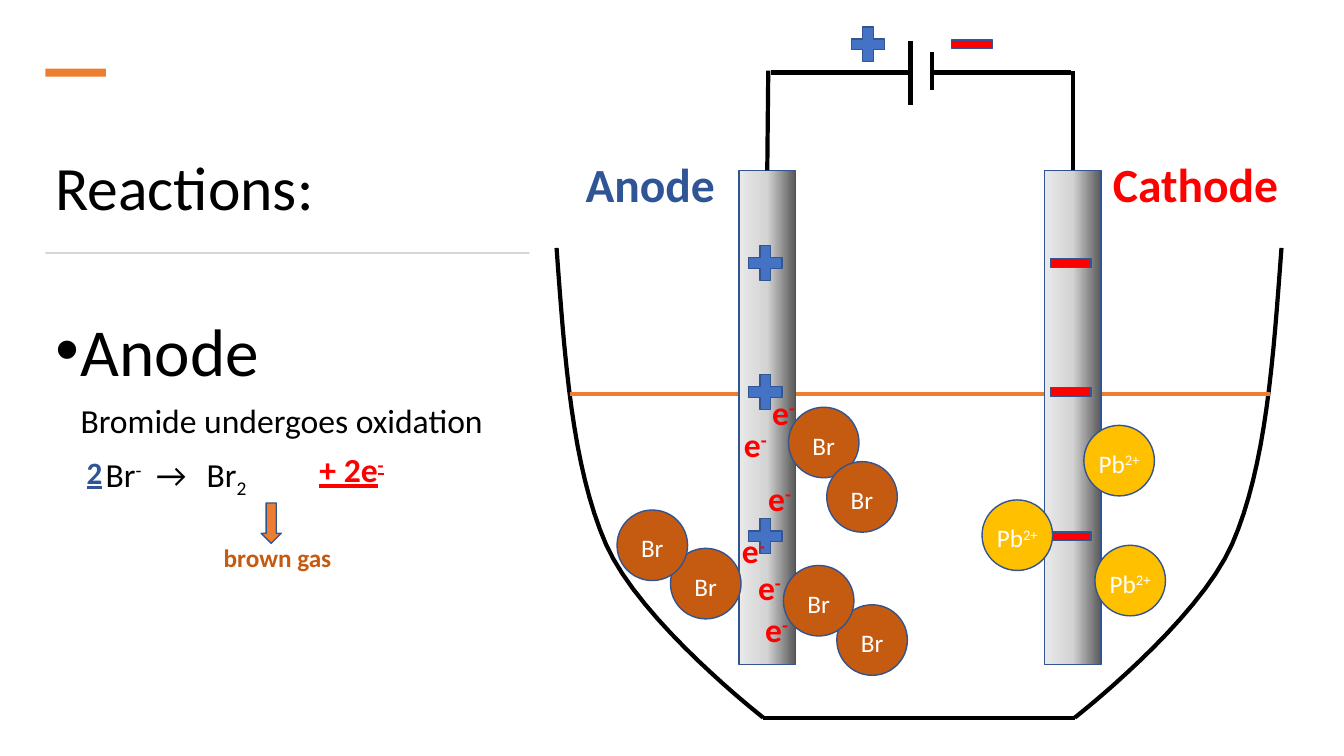
from copy import deepcopy
from dataclasses import dataclass
from lxml import etree
from pptx import Presentation, util as u
from pptx.dml.color import RGBColor
from pptx.enum import shapes, text
from pptx.oxml import ns

MSO = shapes.MSO_SHAPE


@dataclass(frozen=True)
class Theme:
    font: str = "Calibri"
    black: str = "000000"
    white: str = "FFFFFF"
    rule: str = "D5D5D5"
    orange: str = "ED7D31"
    outline: str = "325491"
    plus: str = "4472C4"
    anode: str = "2F5597"
    red: str = "FF0000"
    lead: str = "FFC000"
    bromine: str = "C55A11"
    metal: tuple = ((0, "595959"), (0.5, "D3D3D3"), (1, "E9E9E9"))
    title: int = 44
    heading: int = 48
    electrode: int = 34
    body: int = 24
    coefficient: float = 22.2
    small: int = 18
    stroke: int = 3


T = Theme()


def rgb(colour):
    return RGBColor.from_string(colour)


def add_child(parent, tag, **attrs):
    return etree.SubElement(parent, ns.qn(tag), attrs)


def shape(s, kind, x, y, w, h, fill, line=T.outline):
    sp = s.shapes.add_shape(kind, *map(u.Inches, (x, y, w, h)))
    sp.shadow.inherit = False
    sp.fill.solid()
    sp.fill.fore_color.rgb = rgb(fill)
    if line:
        sp.line.color.rgb = rgb(line)
        sp.line.width = u.Pt(1)
    else:
        sp.line.fill.background()
    return sp


def line(s, x1, y1, x2, y2, colour=T.black):
    c = s.shapes.add_connector(shapes.MSO_CONNECTOR.STRAIGHT, *map(u.Inches, (x1, y1, x2, y2)))
    c.line.color.rgb = rgb(colour)
    c.line.width = u.Pt(T.stroke)
    add_child(c._element.spPr, "a:effectLst")
    return c


def write(p, runs, size, colour, spacing=None, before=None, **style):
    fmt = {"line_spacing": spacing, "space_before": None if before is None else u.Pt(before)}
    for name, value in fmt.items():
        setattr(p, name, value)
    font = {"name": T.font, "size": u.Pt(size), **style}
    for words, baseline in runs:
        r = p.add_run()
        r.text = words
        for name, value in font.items():
            setattr(r.font, name, value)
        r.font.color.rgb = rgb(colour)
        if baseline:
            r._r.get_or_add_rPr().set("baseline", str(baseline * 1000))


def indent(p, left, first=0):
    pPr = p._p.get_or_add_pPr()
    pPr.set("marL", str(u.Inches(left)))
    pPr.set("indent", str(u.Inches(first)))
    return pPr


def text_frame(s, x, y, w, h, wrap=True):
    tf = s.shapes.add_textbox(*map(u.Inches, (x, y, w, h))).text_frame
    tf.word_wrap = wrap
    return tf


def label(s, box, runs, size, colour, wrap=True, **fmt):
    p = text_frame(s, *box, wrap=wrap).paragraphs[0]
    write(p, runs, size, colour, bold=True, **fmt)
    return p


def heading(s, x, y, w):
    shape(s, MSO.RECTANGLE, x, y, 0.6, 0.08, T.orange, None)
    shape(s, MSO.RECTANGLE, x, y + 1.82, w, 0.02, T.rule, None)
    tf = text_frame(s, x, y + 0.4, w, 1.19)
    tf.vertical_anchor = text.MSO_ANCHOR.BOTTOM
    write(tf.paragraphs[0], [("Reactions:", 0)], T.title, T.black, 0.9)


def reaction(s, x, y, w, h):
    tf = text_frame(s, x, y, w, h)
    p = tf.paragraphs[0]
    write(p, [("Anode", 0)], T.heading, T.black, 1.1, 10)
    pPr = indent(p, 0.25, -0.25)
    add_child(pPr, "a:buFont", typeface="Arial")
    add_child(pPr, "a:buChar", char="•")

    p = tf.add_paragraph()
    write(p, [("Bromide undergoes oxidation", 0)], T.body, T.black, 0.9, 10)
    indent(p, 0.25)

    p = tf.add_paragraph()
    equation = [("\tBr", 0), ("-", 30), ("\t→\tBr", 0), ("2", -25)]
    write(p, equation, T.body, T.black, 0.9, 10)
    tabs = add_child(indent(p, 0), "a:tabLst")
    for stop in (0.55, 1.3, 1.97):
        add_child(tabs, "a:tab", pos=str(u.Inches(stop)), algn="l")

    p = label(s, (x + 0.06, y + 1.58, 0.72, 0.42), [("2", 0)], T.coefficient, T.anode,
              spacing=0.8, before=10, underline=True)
    indent(p, 0.25)
    label(s, (x + 2.62, y + 1.51, 1.35, 0.58), [("+ 2e", 0), ("-", 30)], T.body, T.red,
          spacing=0.9, before=10, underline=True)
    label(s, (x + 1.67, y + 2.39, 1.28, 0.4), [("brown gas", 0)], T.small, T.bromine, wrap=False)
    shape(s, MSO.DOWN_ARROW, x + 2.14, y + 2.05, 0.2, 0.4, T.orange)


def bezier(a, b, c, d, steps=16):
    for i in range(1, steps + 1):
        t = i / steps
        k = (1 - t) ** 3, 3 * t * (1 - t) ** 2, 3 * t * t * (1 - t), t ** 3
        yield tuple(sum(f * q[axis] for f, q in zip(k, (a, b, c, d))) for axis in (0, 1))


def beaker(s, x, y, w, h):
    wall = [(0, 0), (0.08, 1.08), (0.15, 2.16), (0.49, 2.94), (0.83, 3.71), (2.05, h), (2.05, h)]
    curve = [wall[0], *bezier(*wall[:4]), *bezier(*wall[3:])]
    for edge, side in ((x, 1), (x + w, -1)):
        points = [(u.Inches(edge + side * dx), u.Inches(y + dy)) for dx, dy in curve]
        outline = s.shapes.build_freeform(*points[0])
        outline.add_line_segments(points[1:], close=False)
        sp = outline.convert_to_shape()
        sp.shadow.inherit = False
        sp.fill.background()
        sp.line.color.rgb = rgb(T.black)
        sp.line.width = u.Pt(T.stroke)
    line(s, x + 2.05, y + h, x + w - 2.05, y + h)
    line(s, x + 0.13, y + 1.45, x + w - 0.11, y + 1.45, T.orange)


def sign(s, kind, cx, cy):
    w, h, fill = {MSO.MATH_PLUS: (0.45, 0.47, T.plus), MSO.MATH_MINUS: (0.55, 0.37, T.red)}[kind]
    shape(s, kind, cx - w / 2, cy - h / 2, w, h, fill)


def electrode(s, x, y, w, h, charge):
    rod = shape(s, MSO.RECTANGLE, x, y, w, h, T.white)
    rod.fill.gradient()
    rod.fill.gradient_angle = 180
    stops = rod._element.spPr.find(".//" + ns.qn("a:gsLst"))
    stops.append(deepcopy(stops[0]))
    for stop, (position, colour) in zip(rod.fill.gradient_stops, T.metal):
        stop.position = position
        stop.color.rgb = rgb(colour)
    for dy in (0.92, 2.2, 3.63):
        sign(s, charge, x + 0.26, y + dy)
    return rod


def circuit(s, x, y, w, h, rods):
    for rod, dx in zip(rods, (0.01, w)):
        line(s, x + dx, y + h, x + dx, y + 0.5).begin_connect(rod, 0)
    for x1, y1, x2, y2 in ((0.04, 0.52, 1.42, 0.52), (1.63, 0.52, w - 0.02, 0.52),
                           (1.42, 0.21, 1.42, 0.84), (1.63, 0.32, 1.63, 0.69)):
        line(s, x + x1, y + y1, x + x2, y + y2)
    sign(s, MSO.MATH_PLUS, x + 1.0, y + 0.24)
    sign(s, MSO.MATH_MINUS, x + 2.03, y + 0.24)


def particles(s, x, y):
    lead = [("Pb", 0), ("2+", 30)], T.lead, ((5.34, 2.95), (4.22, 2.5), (5.23, 1.76))
    bromine = [("Br", 0)], T.bromine, ((1.13, 2.98), (0.6, 2.6), (2.3, 1.58), (2.68, 2.12),
                                       (2.78, 3.54), (2.25, 3.15))
    margins = {"margin_left": 0, "margin_top": u.Inches(0.05), "margin_right": 0,
               "margin_bottom": 0, "vertical_anchor": text.MSO_ANCHOR.MIDDLE}
    for runs, fill, places in (lead, bromine):
        for dx, dy in places:
            tf = shape(s, MSO.OVAL, x + dx, y + dy, 0.7, 0.7, fill).text_frame
            for name, value in margins.items():
                setattr(tf, name, value)
            p = tf.paragraphs[0]
            p.alignment = text.PP_ALIGN.CENTER
            write(p, runs, T.small, T.white)
    for dx, dy in ((1.76, 1.77), (2.04, 1.46), (1.74, 2.83), (2, 2.31), (1.9, 3.19), (1.97, 3.61)):
        label(s, (x + dx, y + dy, 0.48, 0.44), [("e", 0), ("-", 30)], T.body, T.red,
              spacing=0.8, before=10)


def cell(s, x, y):
    beaker(s, x, y + 2.26, 7.19, 4.66)
    rods = [electrode(s, x + dx, y + 1.49, 0.56, 4.9, charge)
            for dx, charge in ((1.81, MSO.MATH_PLUS), (4.84, MSO.MATH_MINUS))]
    circuit(s, x + 2.09, y, 3.03, 1.49, rods)
    particles(s, x, y + 2.26)
    for dx, w, name, colour in ((0.19, 1.49, "Anode", T.anode), (5.42, 1.92, "Cathode", T.red)):
        label(s, (x + dx, y + 1.29, w, 0.67), [(name, 0)], T.electrode, colour)


def main():
    prs = Presentation()
    prs.slide_width, prs.slide_height = u.Inches(13.33), u.Inches(7.5)
    s = prs.slides.add_slide(prs.slide_layouts[6])
    heading(s, 0.45, 0.68, 4.8)
    cell(s, 5.52, 0.2)
    reaction(s, 0.45, 2.94, 5.38, 3.82)
    prs.save("out.pptx")


if __name__ == "__main__":
    main()
